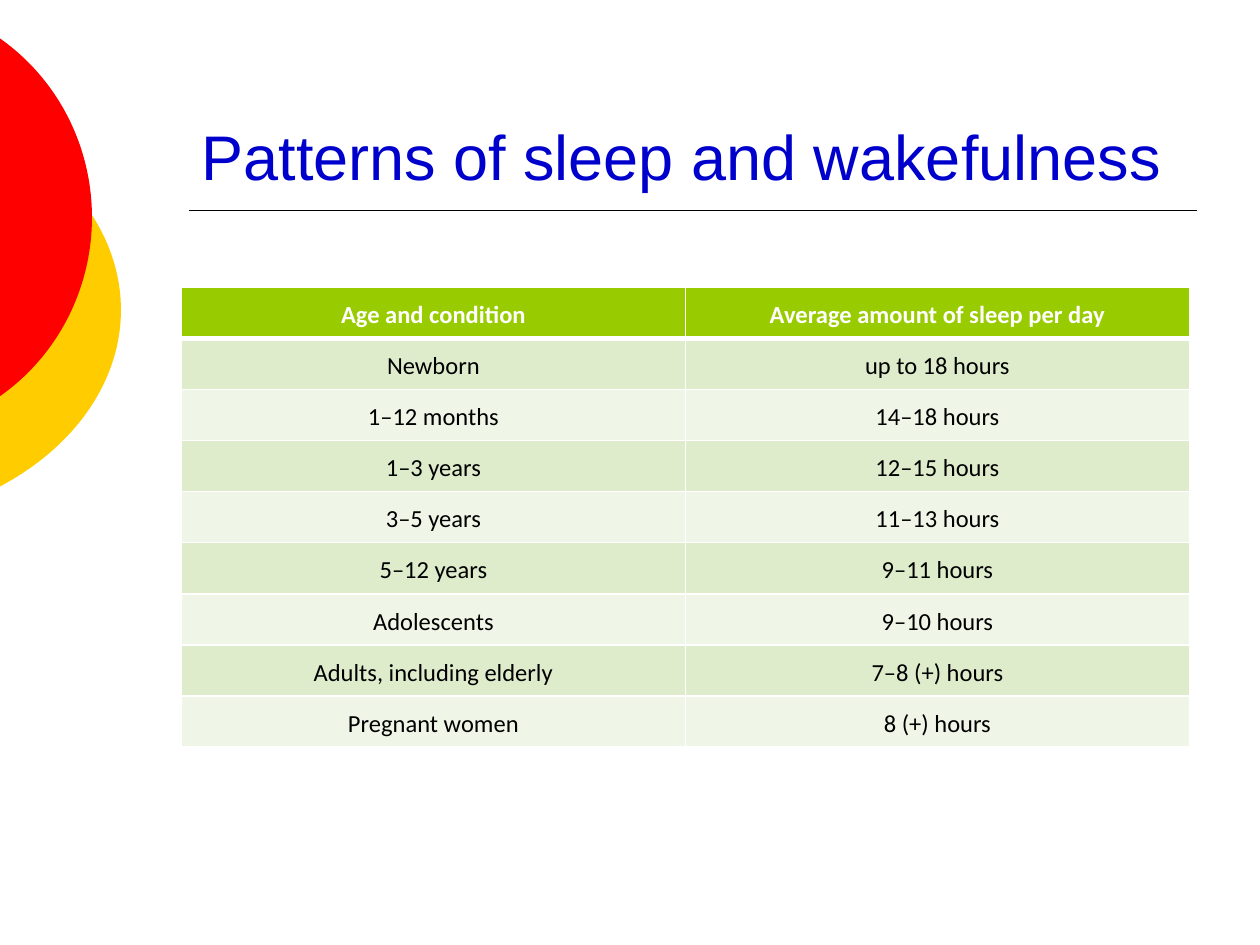
"""Build a slide with a table of sleep needs by age and condition."""
from lxml.etree import SubElement
from pptx import Presentation
from pptx.dml.color import RGBColor
from pptx.enum.shapes import MSO_CONNECTOR, MSO_SHAPE
from pptx.enum.text import MSO_ANCHOR, MSO_AUTO_SIZE, PP_ALIGN
from pptx.oxml.ns import qn
from pptx.util import Inches, Pt


def color(value):
    """Turn a hex string into a colour."""
    return RGBColor.from_string(value)


def add_border(cell, side, width, value):
    """Draw one side of a table cell."""
    line = SubElement(cell._tc.get_or_add_tcPr(), qn(f"a:{side}"), w=str(Pt(width)))
    SubElement(SubElement(line, qn("a:solidFill")), qn("a:srgbClr"), val=value)


presentation = Presentation()
presentation.slide_width, presentation.slide_height = Inches(10), Inches(7.5)
slide = presentation.slides.add_slide(presentation.slide_layouts[5])
left, width = Inches(1.5), Inches(8)

discs = [((-3.54, 0.75, 4.5, 3.42), "FFCC00"), ((-2.65, 0, 3.38, 3.45), "FF0000")]
for frame, fill in discs:
    disc = slide.shapes.add_shape(MSO_SHAPE.OVAL, *map(Inches, frame))
    disc.shadow.inherit = False
    disc.fill.solid()
    disc.fill.fore_color.rgb = color(fill)
    disc.line.fill.background()

rule = slide.shapes.add_connector(
    MSO_CONNECTOR.STRAIGHT, left, Inches(1.67), left + width, Inches(1.67)
)
rule.line.color.rgb = color("000000")
rule.line.width = Pt(1)
SubElement(rule._element.spPr, qn("a:effectLst"))

title = slide.shapes.title
title.left, title.top, title.width, title.height = left, Inches(0.33), width, Inches(1.25)
title.text_frame.text = "Patterns of sleep and wakefulness"
title.text_frame.auto_size = MSO_AUTO_SIZE.NONE
title.text_frame.vertical_anchor = MSO_ANCHOR.BOTTOM
paragraph = title.text_frame.paragraphs[0]
paragraph.alignment = PP_ALIGN.LEFT
font = paragraph.runs[0].font
font.name, font.size = "Arial", Pt(36)
font.color.rgb = color("0000CC")

rows = [
    ("Age and condition", "Average amount of sleep per day"),
    ("Newborn", "up to 18 hours"),
    ("1–12 months", "14–18 hours"),
    ("1–3 years", "12–15 hours"),
    ("3–5 years", "11–13 hours"),
    ("5–12 years", "9–11 hours"),
    ("Adolescents", "9–10 hours"),
    ("Adults, including elderly", "7–8 (+) hours"),
    ("Pregnant women", "8 (+) hours"),
]
table = slide.shapes.add_table(
    len(rows), 2, Inches(1.44), Inches(2.28), width, Inches(3.65)
).table
table.horz_banding = False
for row_index, row in enumerate(rows):
    header = row_index == 0
    fill = "99CC00" if header else ("EFF6E7", "DEECCC")[row_index % 2]
    border_widths = {
        "lnL": 1,
        "lnR": 1,
        "lnT": 3 if row_index == 1 else 1,
        "lnB": 3 if header else 1,
    }
    for column_index, text in enumerate(row):
        cell = table.cell(row_index, column_index)
        cell.text_frame.text = text
        cell.vertical_anchor = MSO_ANCHOR.MIDDLE
        cell.margin_left = cell.margin_right = Inches(0.01)
        cell.margin_top = cell.margin_bottom = Inches(0.01)
        for side, border_width in border_widths.items():
            add_border(cell, side, border_width, "FFFFFF")
        cell.fill.solid()
        cell.fill.fore_color.rgb = color(fill)
        paragraph = cell.text_frame.paragraphs[0]
        paragraph.alignment = PP_ALIGN.CENTER
        paragraph.line_spacing = 1.15
        paragraph.space_after = Pt(10)
        font = paragraph.runs[0].font
        font.name, font.size, font.bold = "Calibri", Pt(14), header
        font.color.rgb = color("FFFFFF" if header else "000000")

presentation.save("out.pptx")
